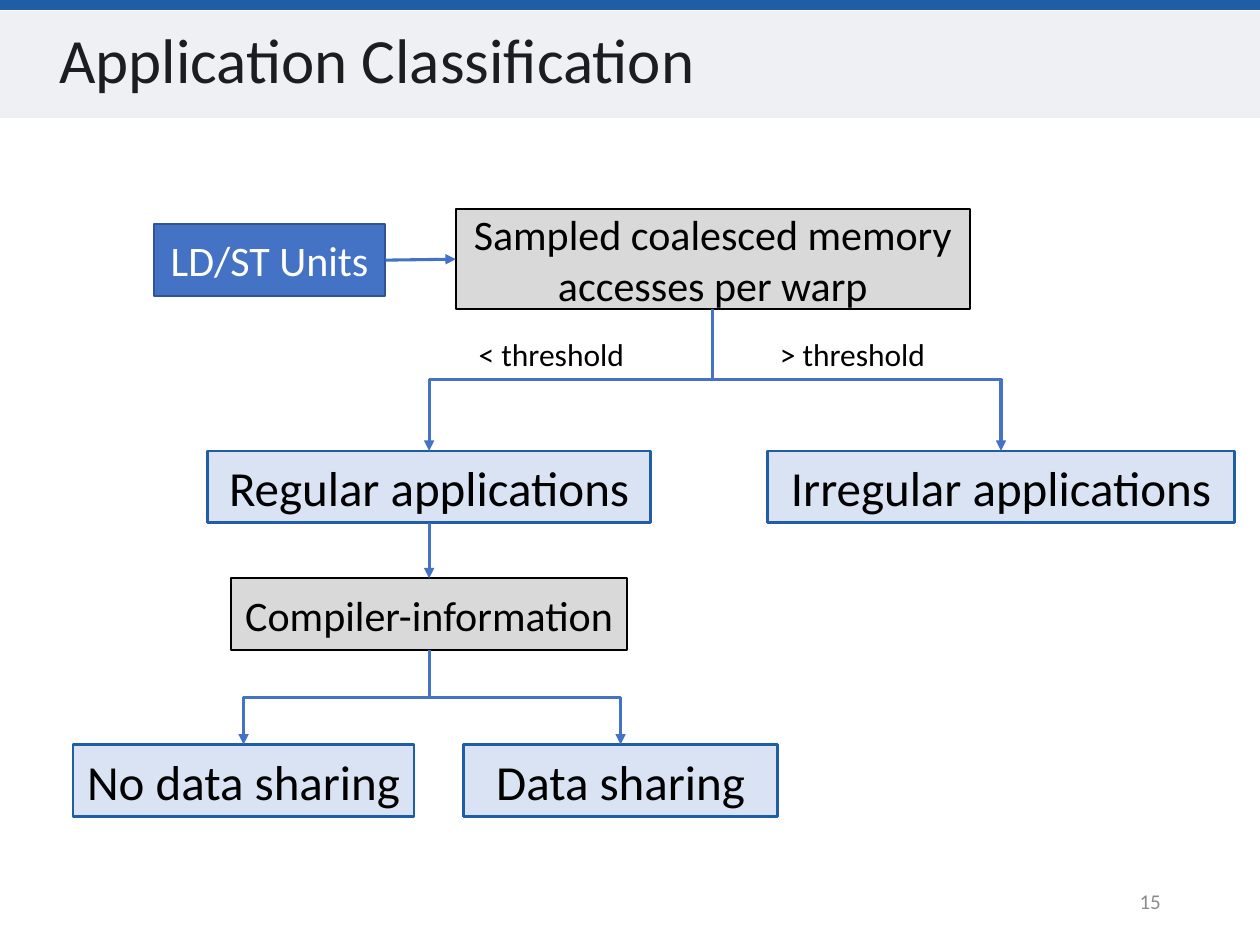
"""Build the application classification slide."""
from dataclasses import dataclass

from lxml.etree import SubElement
from pptx import Presentation
from pptx.dml.color import RGBColor
from pptx.enum.shapes import MSO_CONNECTOR, MSO_SHAPE
from pptx.enum.text import MSO_ANCHOR, PP_ALIGN
from pptx.oxml.ns import qn
from pptx.util import Cm, Pt


@dataclass(frozen=True)
class Theme:
    """Colours, font and type sizes of the slide."""
    font: str = "Calibri"
    ink: str = "000000"
    title_ink: str = "1D1C1F"
    number_ink: str = "8C8C8C"
    light: str = "FFFFFF"
    band: str = "EFF0F3"
    accent: str = "1F5DA5"
    arrow: str = "4472C4"
    unit_line: str = "325491"
    group: str = "DAE3F3"
    step: str = "D9D9D9"
    title_size: int = 36
    group_size: int = 28
    step_size: int = 24
    label_size: int = 18
    number_size: int = 12


TOP, LEFT, BOTTOM, RIGHT = range(4)


class FlowSlide:
    """Hold the theme and the slide, and draw each kind of element."""

    def __init__(self, slide, theme):
        """Keep the slide and its theme."""
        self.slide = slide
        self.theme = theme

    def letter(self, shape, wording, size, color, align=PP_ALIGN.LEFT, anchor=MSO_ANCHOR.MIDDLE):
        """Put formatted wording into a shape."""
        frame = shape.text_frame
        frame.text = wording
        frame.word_wrap = True
        frame.vertical_anchor = anchor
        paragraph = frame.paragraphs[0]
        paragraph.alignment = align
        font = paragraph.runs[0].font
        font.name = self.theme.font
        font.size = Pt(size)
        font.color.rgb = RGBColor.from_string(color)
        return paragraph

    def title(self, wording, left, top, width, height):
        """Place and fill the title placeholder."""
        heading = self.slide.shapes.title
        heading.left, heading.top = Cm(left), Cm(top)
        heading.width, heading.height = Cm(width), Cm(height)
        paragraph = self.letter(heading, wording, self.theme.title_size, self.theme.title_ink)
        paragraph.line_spacing = 0.9

    def rectangle(self, left, top, width, height, fill):
        """Draw a plain filled rectangle without a shadow."""
        rectangle = self.slide.shapes.add_shape(
            MSO_SHAPE.RECTANGLE, Cm(left), Cm(top), Cm(width), Cm(height))
        rectangle.shadow.inherit = False
        rectangle.fill.solid()
        rectangle.fill.fore_color.rgb = RGBColor.from_string(fill)
        rectangle.line.fill.background()
        return rectangle

    def band(self, top, height, fill):
        """Draw a full-width band behind the title."""
        band = self.rectangle(0, top, 25.4, height, fill)
        self.slide.shapes.title.element.addprevious(band.element)

    def box(self, wording, left, top, width, height, fill, outline, weight, size, color):
        """Draw an outlined box with centred wording."""
        box = self.rectangle(left, top, width, height, fill)
        box.line.color.rgb = RGBColor.from_string(outline)
        box.line.width = Pt(weight)
        self.letter(box, wording, size, color, PP_ALIGN.CENTER)
        return box

    def group(self, wording, left, top, width):
        """Draw a box for a class of applications."""
        theme = self.theme
        return self.box(wording, left, top, width, 1.45, theme.group,
                        theme.accent, 1.5, theme.group_size, theme.ink)

    def step(self, wording, left, top, width, height):
        """Draw a box for a deciding step."""
        theme = self.theme
        return self.box(wording, left, top, width, height, theme.step,
                        theme.ink, 1, theme.step_size, theme.ink)

    def unit(self, wording, left, top, width, height):
        """Draw a box for a hardware unit."""
        theme = self.theme
        return self.box(wording, left, top, width, height, theme.arrow,
                        theme.unit_line, 1, theme.step_size, theme.light)

    def label(self, wording, left, top, width, size, color,
              align=PP_ALIGN.LEFT, anchor=MSO_ANCHOR.TOP):
        """Place a free-standing line of text."""
        label = self.slide.shapes.add_textbox(Cm(left), Cm(top), Cm(width), Cm(1.02))
        self.letter(label, wording, size, color, align, anchor)

    def arrow(self, source, target, exit_side=BOTTOM, entry_side=TOP, kind=MSO_CONNECTOR.STRAIGHT):
        """Join two boxes with an arrow."""
        arrow = self.slide.shapes.add_connector(kind, 0, 0, 0, 0)
        arrow.begin_connect(source, exit_side)
        arrow.end_connect(target, entry_side)
        arrow.line.color.rgb = RGBColor.from_string(self.theme.arrow)
        arrow.line.width = Pt(1.75)
        properties = arrow.element.spPr
        SubElement(properties.find(qn("a:ln")), qn("a:tailEnd"), type="triangle")
        SubElement(properties, qn("a:effectLst"))
        return arrow

    def branch(self, source, *targets):
        """Fork downwards from one box to several."""
        for target in targets:
            arrow = self.arrow(source, target, kind=MSO_CONNECTOR.ELBOW)
            goes_right = arrow.end_x > arrow.begin_x
            center_x = arrow.left + arrow.width // 2
            center_y = arrow.top + arrow.height // 2
            arrow.width, arrow.height = arrow.height, arrow.width
            arrow.left = center_x - arrow.width // 2
            arrow.top = center_y - arrow.height // 2
            frame = arrow.element.spPr.find(qn("a:xfrm"))
            frame.set("rot", str((270 if goes_right else 90) * 60000))
            frame.set("flipH", str(int(goes_right)))


def main():
    """Compose the slide and save it."""
    deck = Presentation()
    deck.slide_width, deck.slide_height = Cm(25.4), Cm(19.05)
    theme = Theme()
    flow = FlowSlide(deck.slides.add_slide(deck.slide_layouts[5]), theme)

    flow.band(0.22, 2.16, theme.band)
    flow.band(0, 0.2, theme.accent)
    flow.title("Application Classification", 0.94, 0.2, 18.77, 2.16)

    units = flow.unit("LD/ST Units", 3.1, 4.52, 4.67, 1.45)
    accesses = flow.step("Sampled coalesced memory accesses per warp", 9.19, 4.22, 10.36, 2.01)
    regular = flow.group("Regular applications", 4.19, 9.09, 8.92)
    irregular = flow.group("Irregular applications", 15.47, 9.09, 9.42)
    compiler = flow.step("Compiler-information", 4.66, 11.66, 7.98, 1.45)
    no_sharing = flow.group("No data sharing", 1.47, 15.01, 6.88)
    sharing = flow.group("Data sharing", 9.35, 15.01, 6.32)

    flow.arrow(units, accesses, RIGHT, LEFT)
    flow.branch(accesses, regular, irregular)
    flow.arrow(regular, compiler)
    flow.branch(compiler, no_sharing, sharing)

    flow.label("< threshold", 9.4, 6.63, 3.66, theme.label_size, theme.ink)
    flow.label("> threshold", 15.47, 6.63, 6.17, theme.label_size, theme.ink)
    flow.label("15", 17.93, 17.65, 5.72, theme.number_size, theme.number_ink,
               PP_ALIGN.RIGHT, MSO_ANCHOR.MIDDLE)

    deck.save("out.pptx")


if __name__ == "__main__":
    main()
